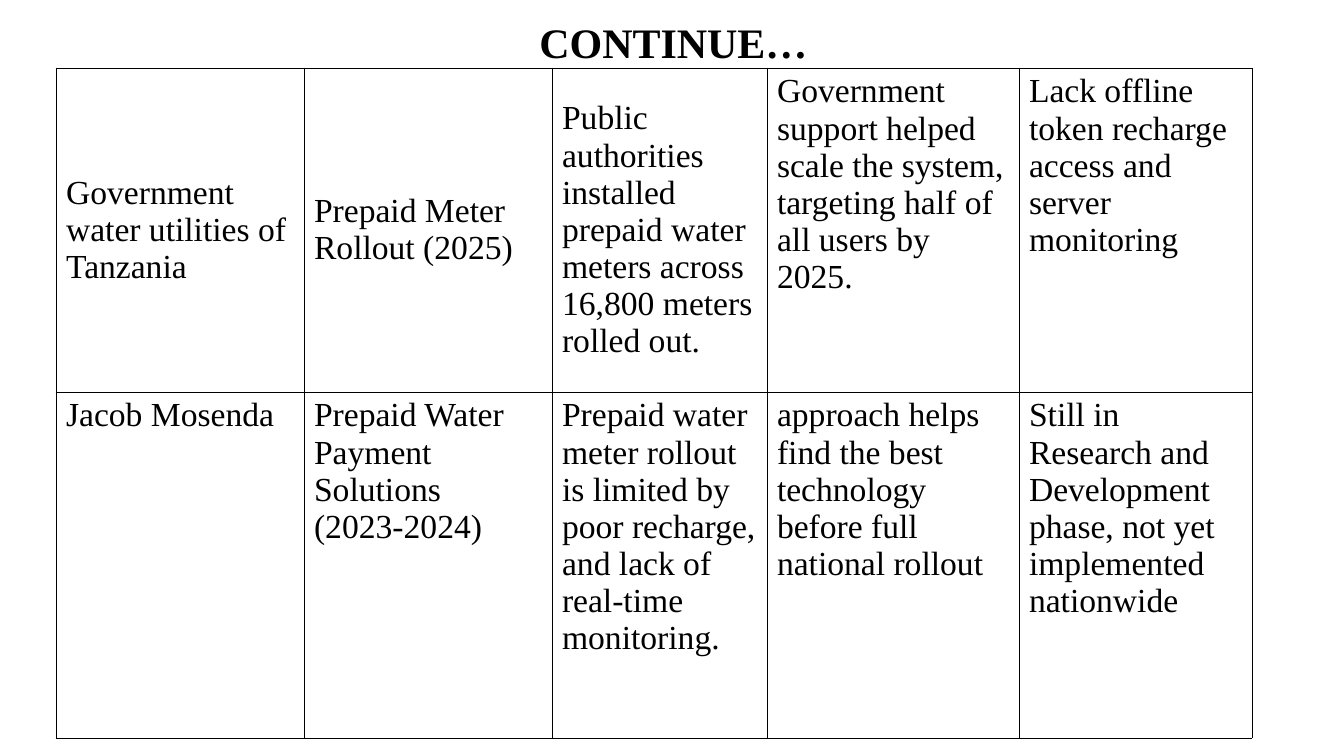
from lxml import etree
from pptx import Presentation
from pptx.dml.color import RGBColor
from pptx.enum.text import MSO_ANCHOR, PP_ALIGN
from pptx.oxml.ns import qn
from pptx.util import Pt

PX = 914400 / 100.8
FONT = "Times New Roman"
COLORS = {"text": "000000", "border": "000000"}
LEFT, CENTER = PP_ALIGN.LEFT, PP_ALIGN.CENTER
TOP, MIDDLE = MSO_ANCHOR.TOP, MSO_ANCHOR.MIDDLE
COLUMNS = [248, 248, 215, 252, 233]
ROWS = [324, 346]
STUDIES = [
    [
        ("Government water utilities of Tanzania", MIDDLE),
        ("Prepaid Meter Rollout (2025)", MIDDLE),
        ("Public authorities installed prepaid water meters across "
         "16,800 meters rolled out.", MIDDLE),
        ("Government support helped scale the system, targeting half of "
         "all users by 2025.", TOP),
        ("Lack offline token recharge access and server monitoring", TOP),
    ],
    [
        ("Jacob Mosenda", TOP),
        ("Prepaid Water Payment Solutions\n(2023-2024)", TOP),
        ("Prepaid water meter rollout is limited by poor recharge, "
         "and lack of real-time monitoring.", TOP),
        ("approach helps find the best technology before full "
         "national rollout", TOP),
        ("Still in Research and Development phase, not yet implemented "
         "nationwide", TOP),
    ],
]


def px(n):
    return round(n * PX)


def write(tf, text, size=24, bold=False, align=LEFT, spacing=1.0):
    tf.word_wrap = True
    for i, line in enumerate(text.split("\n")):
        p = tf.paragraphs[0] if i == 0 else tf.add_paragraph()
        p.alignment = align
        p.line_spacing = spacing
        r = p.add_run()
        r.text = line
        r.font.name = FONT
        r.font.size = Pt(size)
        r.font.bold = bold
        r.font.color.rgb = RGBColor.from_string(COLORS["text"])


def add_borders(cell):
    tc_pr = cell._tc.get_or_add_tcPr()
    for side in ("lnL", "lnR", "lnT", "lnB"):
        ln = etree.SubElement(tc_pr, qn(f"a:{side}"), w=str(Pt(0.5)))
        fill = etree.SubElement(ln, qn("a:solidFill"))
        etree.SubElement(fill, qn("a:srgbClr"), val=COLORS["border"])


def add_title(s, x, y, w, h):
    sp = s.shapes.title
    sp.left, sp.top, sp.width, sp.height = map(px, (x, y, w, h))
    sp.text_frame.vertical_anchor = MIDDLE
    write(sp.text_frame, "CONTINUE…", size=30, bold=True, align=CENTER,
          spacing=0.9)


def add_studies(s, x, y):
    table = s.shapes.add_table(len(ROWS), len(COLUMNS), px(x), px(y),
                               px(sum(COLUMNS)), px(sum(ROWS))).table
    table.first_row = False
    table.horz_banding = False
    for column, width in zip(table.columns, COLUMNS):
        column.width = px(width)
    for row, height, studies in zip(table.rows, ROWS, STUDIES):
        row.height = px(height)
        for cell, (text, anchor) in zip(row.cells, studies):
            add_borders(cell)
            cell.fill.background()
            cell.vertical_anchor = anchor
            write(cell.text_frame, text)


def main():
    prs = Presentation()
    prs.slide_width, prs.slide_height = px(1344), px(756)
    s = prs.slides.add_slide(prs.slide_layouts[5])
    add_title(s, 95, 0, 1157, 90)
    add_studies(s, 56, 68)
    prs.save("out.pptx")


if __name__ == "__main__":
    main()
